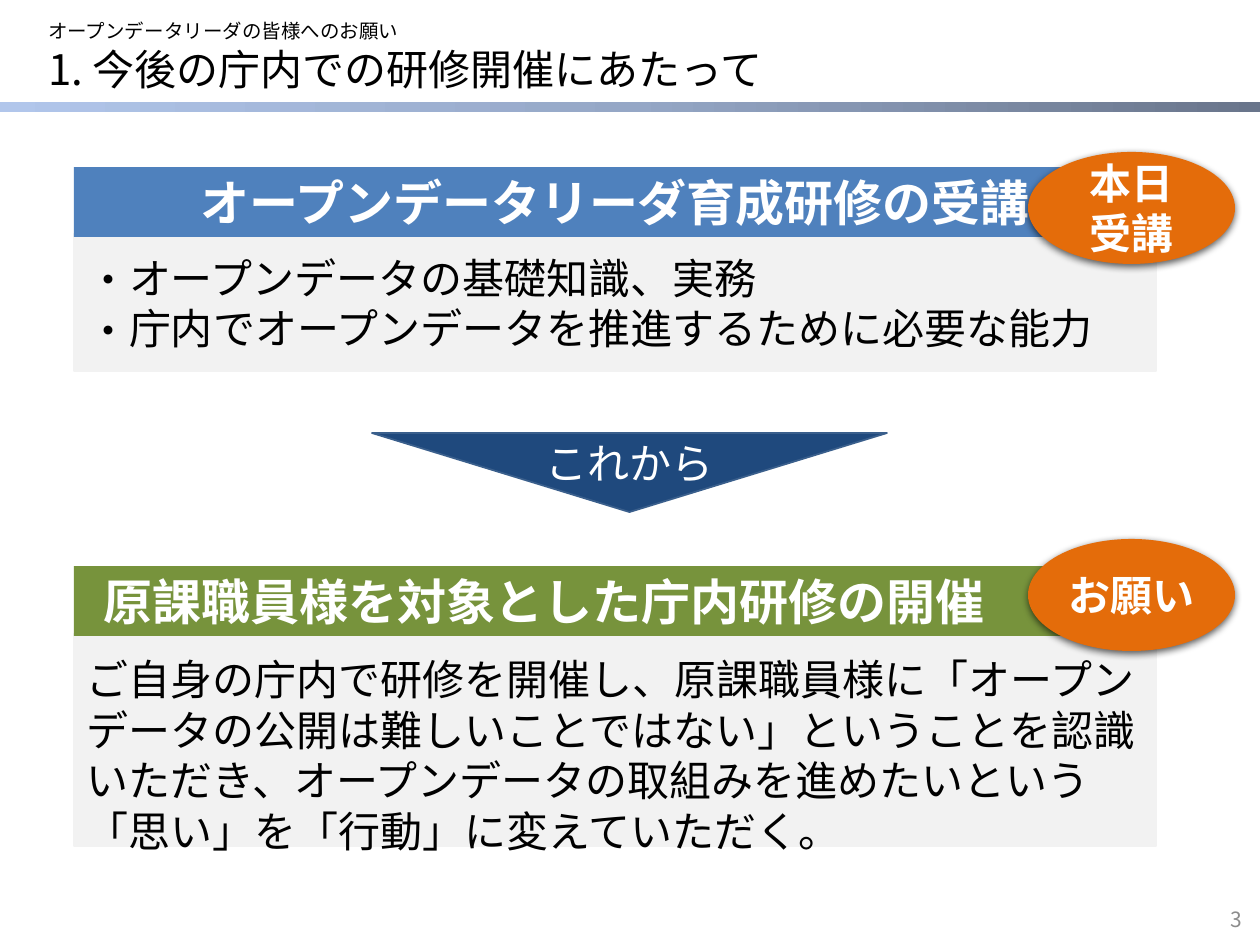
from lxml.etree import SubElement
from pptx import Presentation
from pptx.dml.color import RGBColor
from pptx.enum.shapes import MSO_SHAPE
from pptx.enum.text import MSO_ANCHOR, MSO_AUTO_SIZE, PP_ALIGN
from pptx.oxml.ns import qn
from pptx.util import Emu, Pt

PX_PER_INCH = 126
FONT = "Noto Sans CJK JP"
COLORS = {
    "ink": "000000", "white": "FFFFFF", "panel": "F2F2F2",
    "blue": "4F81BD", "green": "77933C", "orange": "E46C0A",
    "navy": "1F497D", "navy_line": "3A5F8C", "page_number": "8C8C8C",
    "band_left": "B1C6EB", "band_middle": "95A7C6", "band_right": "69758B",
}
LEFT, WIDTH = 74, 1082
BANNER_HEIGHT = 70
DEFAULT_INSETS = (13, 6, 13, 6)
BADGE_INSETS = (5, 5, 5, 6)


def px(value):
    return Emu(round(value * 914400 / PX_PER_INCH))


def color(name):
    return RGBColor.from_string(COLORS[name])


def place(item, left, top, width, height):
    item.left, item.top = px(left), px(top)
    item.width, item.height = px(width), px(height)


def paint(shape, fill, line=None):
    shape.fill.solid()
    shape.fill.fore_color.rgb = color(fill)
    if line:
        shape.line.color.rgb = color(line)
        shape.line.width = Pt(1)
    else:
        shape.line.fill.background()


def write(shape, lines, size, ink="ink", bold=False, align=PP_ALIGN.LEFT,
          anchor=MSO_ANCHOR.MIDDLE, insets=DEFAULT_INSETS, spacing=1.0):
    frame = shape.text_frame
    frame.word_wrap = True
    frame.auto_size = MSO_AUTO_SIZE.NONE
    frame.vertical_anchor = anchor
    (frame.margin_left, frame.margin_top,
     frame.margin_right, frame.margin_bottom) = map(px, insets)
    for index, line in enumerate(lines):
        para = frame.add_paragraph() if index else frame.paragraphs[0]
        para.alignment = align
        para.line_spacing = spacing
        para.space_before = Pt(0)
        span = para.add_run()
        span.text = line
        span.font.name = FONT
        span.font.size = Pt(size)
        span.font.bold = bold
        span.font.color.rgb = color(ink)
        SubElement(span.font._element, qn("a:ea"), typeface=FONT)


def add_label(page, box, text, size, **style):
    label = page.shapes.add_textbox(*map(px, box))
    write(label, [text], size, **style)


def add_block(page, kind, box, fill, line=None):
    block = page.shapes.add_shape(kind, *map(px, box))
    block.shadow.inherit = False
    paint(block, fill, line)
    return block


def add_header_band(page):
    band = add_block(page, MSO_SHAPE.RECTANGLE, (0, 102, 1260, 10), "band_left")
    band.fill.gradient()
    band.fill.gradient_angle = 0
    stops = band._element.spPr.find(".//" + qn("a:gsLst"))
    stops.clear()
    for position, name in ((0, "band_left"), (50, "band_middle"), (100, "band_right")):
        stop = SubElement(stops, qn("a:gs"), pos=str(position * 1000))
        SubElement(stop, qn("a:srgbClr"), val=COLORS[name])


def add_banner(page, top, text, fill, insets=DEFAULT_INSETS):
    banner = add_block(page, MSO_SHAPE.RECTANGLE, (LEFT, top, WIDTH, BANNER_HEIGHT), fill)
    write(banner, [text], 28, "white", True, PP_ALIGN.CENTER, insets=insets)


def add_badge(page, top, lines):
    badge = add_block(page, MSO_SHAPE.OVAL, (1028, top, 207, 112), "orange")
    effects = badge._element.spPr.find(qn("a:effectLst"))
    shadow = SubElement(effects, qn("a:outerShdw"), blurRad=str(Pt(4.5)),
                        dist=str(Pt(1.5)), dir="5400000", rotWithShape="0")
    tint = SubElement(shadow, qn("a:srgbClr"), val=COLORS["ink"])
    SubElement(tint, qn("a:alpha"), val="63000")
    write(badge, lines, 24, "white", True, PP_ALIGN.CENTER, insets=BADGE_INSETS)


def add_arrow(page, text):
    arrow = add_block(page, MSO_SHAPE.DOWN_ARROW, (372, 433, 515, 79), "navy", "navy_line")
    arrow.adjustments[0] = 0.724
    arrow.adjustments[1] = 1
    write(arrow, [text], 24, "white", align=PP_ALIGN.CENTER, insets=(5, 44, 5, 6))


def fill_list(body, lines):
    place(body, LEFT, 234, WIDTH, 137)
    paint(body, "panel", "panel")
    write(body, lines, 24)
    indent = px(42)
    for para in body.text_frame.paragraphs:
        properties = para._p.get_or_add_pPr()
        properties.set("marL", str(indent))
        properties.set("indent", str(-indent))
        SubElement(properties, qn("a:buFont"), typeface=FONT)
        SubElement(properties, qn("a:buChar"), char="・")


def main():
    deck = Presentation()
    deck.slide_width, deck.slide_height = px(1260), px(945)
    page = deck.slides.add_slide(deck.slide_layouts[1])

    title, body = page.placeholders
    place(title, 35, 43, 1201, 58)
    write(title, ["1. 今後の庁内での研修開催にあたって"], 24, spacing=0.9)
    fill_list(body, ["オープンデータの基礎知識、実務",
                     "庁内でオープンデータを推進するために必要な能力"])

    add_header_band(page)
    add_label(page, (35, 16, 1201, 33), "オープンデータリーダの皆様へのお願い", 11.1, spacing=0.8)

    add_banner(page, 167, "オープンデータリーダ育成研修の受講", "blue")
    add_badge(page, 152, ["本日", "受講"])

    add_arrow(page, "これから")

    request = add_block(page, MSO_SHAPE.RECTANGLE, (LEFT, 634, WIDTH, 212), "panel", "panel")
    write(request, ["ご自身の庁内で研修を開催し、原課職員様に「オープンデータの公開は"
                    "難しいことではない」ということを認識いただき、オープンデータの"
                    "取組みを進めたいという「思い」を「行動」に変えていただく。"],
          24, anchor=MSO_ANCHOR.TOP, insets=(13, 20, 13, 6))
    add_banner(page, 566, "原課職員様を対象とした庁内研修の開催", "green", (0, 6, 142, 6))
    add_badge(page, 539, ["お願い"])

    add_label(page, (1186, 900, 69, 39), "3", 12, ink="page_number", align=PP_ALIGN.RIGHT)
    deck.save("out.pptx")


if __name__ == "__main__":
    main()
